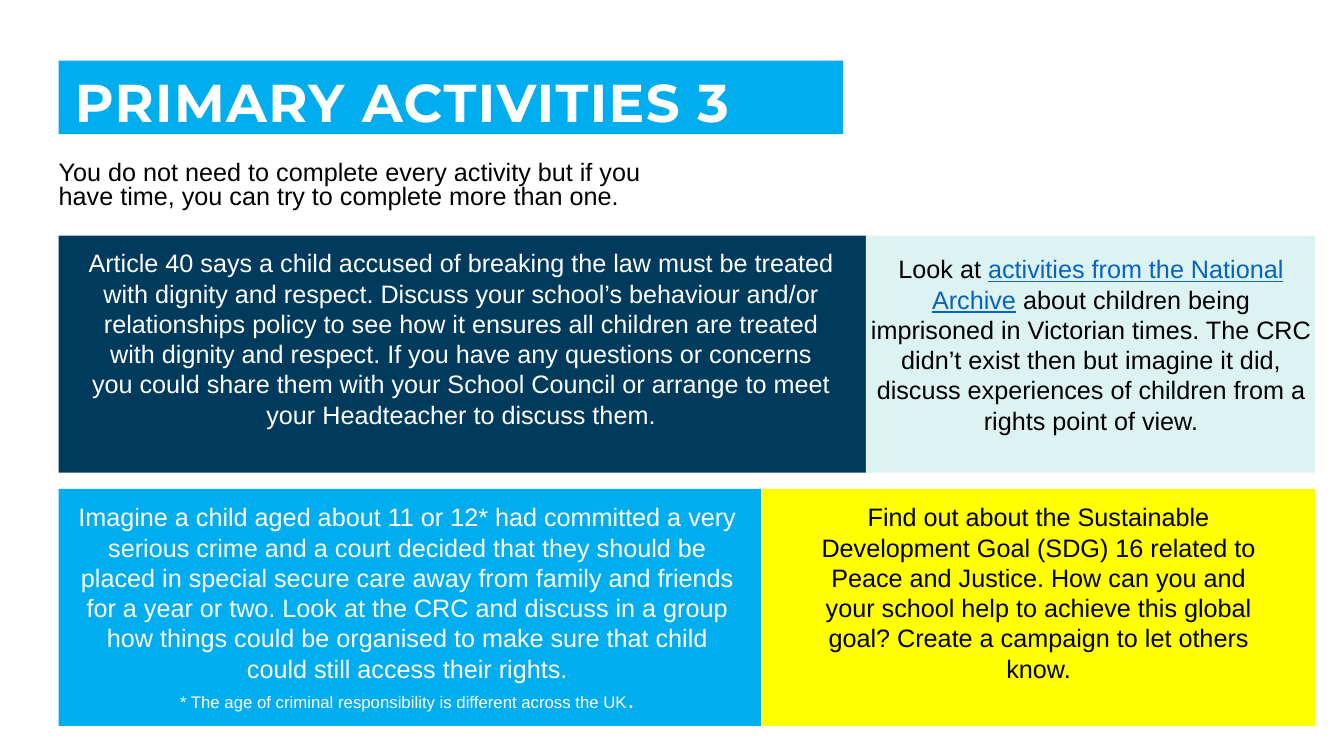
from pptx import Presentation
from pptx.dml.color import RGBColor
from pptx.enum.shapes import MSO_SHAPE as Shape
from pptx.enum.text import MSO_ANCHOR as Anchor, MSO_AUTO_SIZE as AutoSize, PP_ALIGN as Align
from pptx.util import Cm, Pt

WHITE, BLACK, SKY, LINK = "FFFFFF", "000000", "00AEEF", "0563C1"
LEFT, RIGHT = 1.48, 33.14
ROW_TOP, ROW_HEIGHT, ROW_PITCH = 5.94, 5.97, 6.38

TITLE_FORMAT = {"name": "Montserrat", "size": Pt(38), "bold": True}
BODY_FORMAT = {"name": "Arial", "size": Pt(18)}
NOTE_FORMAT = {**BODY_FORMAT, "size": Pt(12)}
LINK_FORMAT = {**BODY_FORMAT, "underline": True}

POLICY = [[(
    "Article 40 says a child accused of breaking the law must be treated with dignity and "
    "respect. Discuss your school’s behaviour and/or relationships policy to see how it ensures "
    "all children are treated with dignity and respect. If you have any questions or concerns "
    "you could share them with your School Council or arrange to meet your Headteacher to "
    "discuss them.", WHITE, BODY_FORMAT)]]
VICTORIAN = [[
    ("Look at ", BLACK, BODY_FORMAT),
    ("activities from the National Archive", LINK, LINK_FORMAT),
    (" about children being imprisoned in Victorian times. The CRC didn’t exist then but "
     "imagine it did, discuss experiences of children from a rights point of view.",
     BLACK, BODY_FORMAT)]]
SECURE_CARE = [
    [("Imagine a child aged about 11 or 12* had committed a very serious crime and a court "
      "decided that they should be placed in special secure care away from family and friends "
      "for a year or two. Look at the CRC and discuss in a group how things could be organised "
      "to make sure that child could still access their rights.", WHITE, BODY_FORMAT)],
    [("* The age of criminal responsibility is different across the UK", WHITE, NOTE_FORMAT),
     (".", WHITE, BODY_FORMAT)]]
GLOBAL_GOAL = [[(
    "Find out about the Sustainable Development Goal (SDG) 16 related to Peace and Justice. "
    "How can you and your school help to achieve this global goal? Create a campaign to let "
    "others know.", BLACK, BODY_FORMAT)]]

ROWS = [
    (21.82, [("003B5E", POLICY, (1.93, 6.12, 19.38, 4.88)),
             ("DDF3F1", VICTORIAN, (21.69, 6.27, 11.61, 4.88))]),
    (19.18, [(SKY, SECURE_CARE, (1.63, 12.52, 17.27, 5.64)),
             ("FFFF00", GLOBAL_GOAL, (20.37, 12.52, 11.61, 4.88))]),
]


def color(value):
    return RGBColor.from_string(value)


def set_all(target, values):
    for name, value in values.items():
        setattr(target, name, value)


def place(box, area):
    set_all(box, dict(zip(("left", "top", "width", "height"), map(Cm, area))))


def fill_solid(box, value):
    box.fill.solid()
    box.fill.fore_color.rgb = color(value)


def write(box, paragraphs, align, frame_format=None, spacing=1.0):
    frame = box.text_frame
    set_all(frame, {"word_wrap": True, "auto_size": AutoSize.NONE, **(frame_format or {})})
    for index, spans in enumerate(paragraphs):
        para = frame.add_paragraph() if index else frame.paragraphs[0]
        set_all(para, {"alignment": align, "line_spacing": spacing, "space_before": Pt(0)})
        for text, value, font_format in spans:
            span = para.add_run()
            span.text = text
            set_all(span.font, font_format)
            span.font.color.rgb = color(value)


def add_title(page, text):
    title = page.shapes.title
    place(title, (LEFT, 1.53, 19.76, 1.85))
    fill_solid(title, SKY)
    insets = {"margin_left": Cm(0.41), "margin_top": Cm(0.41), "margin_right": Cm(0.3),
              "margin_bottom": Cm(0), "vertical_anchor": Anchor.MIDDLE}
    write(title, [[(text, WHITE, TITLE_FORMAT)]], Align.LEFT, insets, 0.9)
    title.text_frame.paragraphs[0].runs[0].font._element.set("spc", "100")


def add_text(page, area, *args):
    box = page.shapes.add_textbox(*map(Cm, area))
    write(box, *args)


def add_panel(page, area, value):
    panel = page.shapes.add_shape(Shape.RECTANGLE, *map(Cm, area))
    panel.shadow.inherit = False
    panel.line.fill.background()
    fill_solid(panel, value)


def add_row(page, top, split, cards):
    edges = (LEFT, split, RIGHT)
    for start, end, (value, paragraphs, text_area) in zip(edges, edges[1:], cards):
        add_panel(page, (start, top, end - start, ROW_HEIGHT), value)
        add_text(page, text_area, paragraphs, Align.CENTER)


def main():
    deck = Presentation()
    set_all(deck, {"slide_width": Cm(33.87), "slide_height": Cm(19.05)})
    page = deck.slides.add_slide(deck.slide_layouts[5])
    add_title(page, "PRIMARY ACTIVITIES 3")
    intro = ("You do not need to complete every activity but if you have time, "
             "you can try to complete more than one.")
    add_text(page, (LEFT, 3.96, 15.77, 1.57), [[(intro, BLACK, BODY_FORMAT)]],
             Align.LEFT, {"margin_left": Cm(0)}, 0.8)
    for index, (split, cards) in enumerate(ROWS):
        add_row(page, ROW_TOP + index * ROW_PITCH, split, cards)
    deck.save("out.pptx")


if __name__ == "__main__":
    main()
